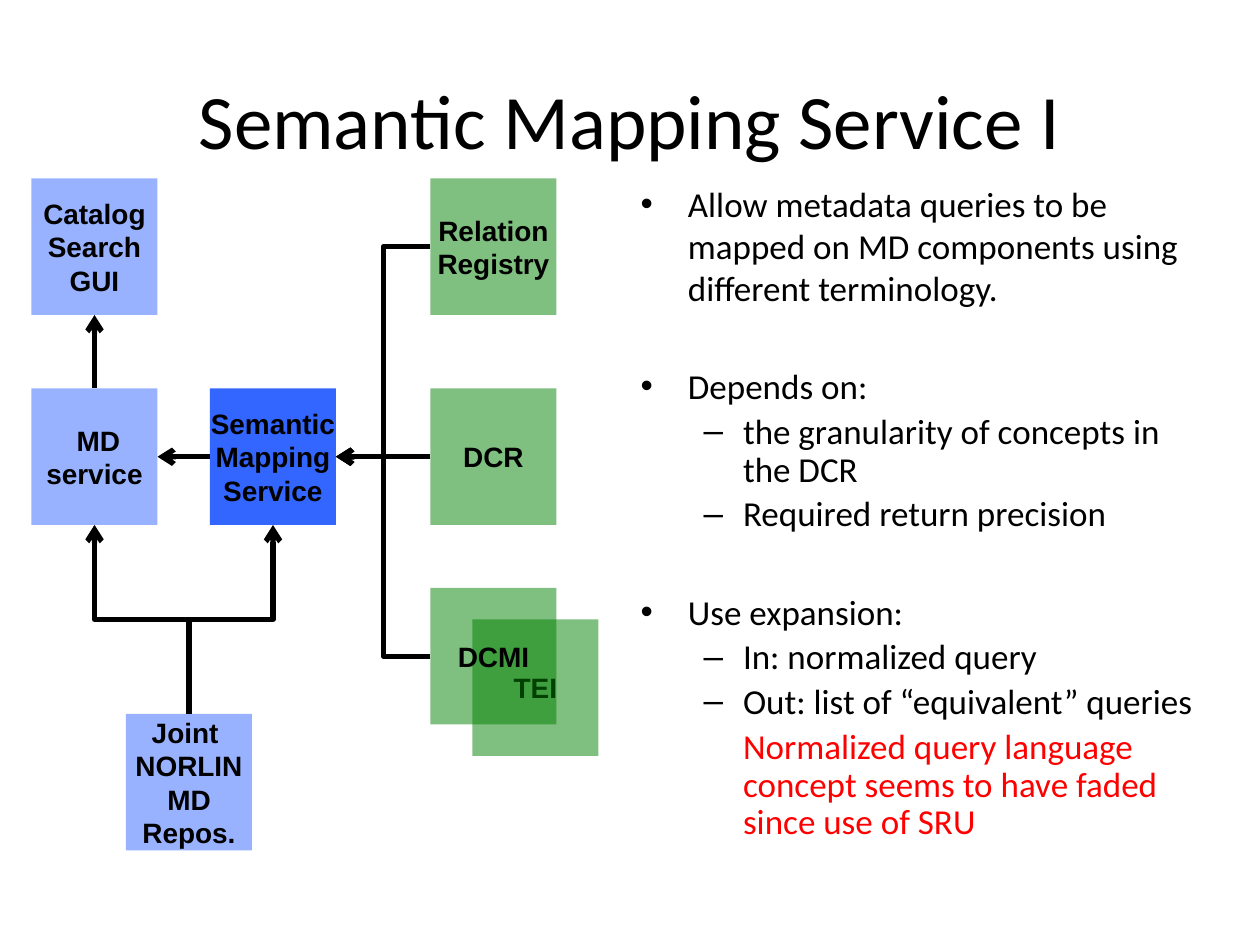
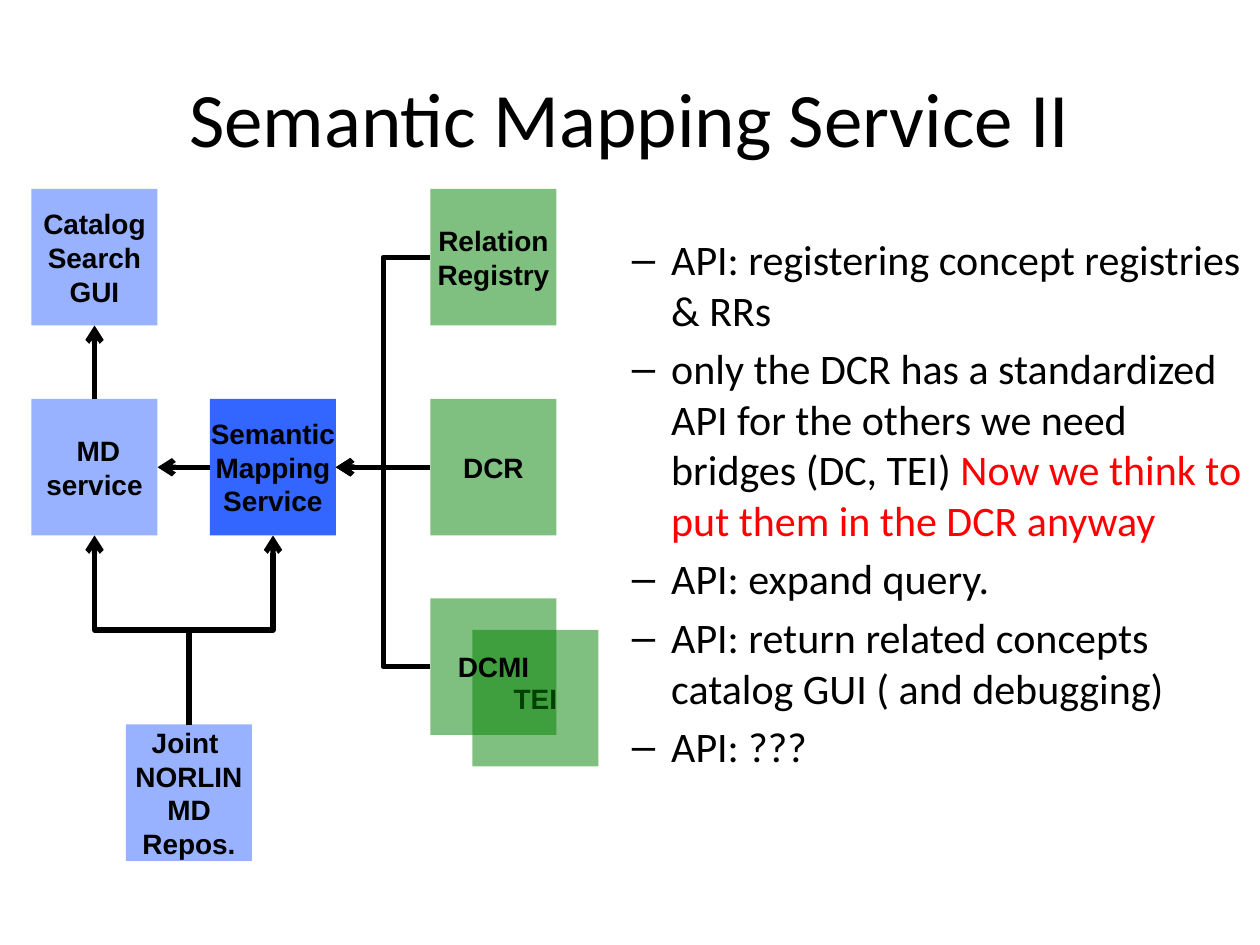
"""Build two slides that explain a semantic mapping service."""
from lxml.etree import SubElement
from pptx import Presentation
from pptx.dml.color import RGBColor
from pptx.enum.shapes import MSO_CONNECTOR, MSO_SHAPE
from pptx.enum.text import MSO_ANCHOR, PP_ALIGN
from pptx.oxml.ns import qn
from pptx.util import Pt

COLORS = {"text": "000000", "remark": "FF0000", "service": "3366FF", "registry": "008000"}
BODY_FONT, BOX_FONT = "Calibri", "Arial"
BOX_WIDTH, BOX_HEIGHT = 72, 78
LEFT, MIDDLE, RIGHT = 0, 102, 228
ROW_STEP = 120

COMPONENTS = {
    "md": (LEFT, ROW_STEP, "service", 50, " MD\nservice"),
    "mapping": (MIDDLE, ROW_STEP, "service", 100, "Semantic\nMapping\nService"),
    "relation": (RIGHT, 0, "registry", 50, "Relation\nRegistry"),
    "catalog": (LEFT, 0, "service", 50, "Catalog\nSearch\nGUI"),
    "repository": (54, 306, "service", 50, "Joint \nNORLIN\vMD Repos."),
    "dcr": (RIGHT, ROW_STEP, "registry", 50, "DCR"),
    "tei": (RIGHT + 24, 252, "registry", 50, "TEI"),
    "dcmi": (RIGHT, 234, "registry", 50, "DCMI"),
}
SIDEWAYS_FLOWS = [("relation", "mapping"), ("dcr", "mapping"), ("dcmi", "mapping"), ("mapping", "md")]
UPWARD_FLOWS = [("repository", "md"), ("repository", "mapping"), ("md", "catalog")]

BULLETS = {"point": ("•", 27, -27, 1.0), "detail": ("–", 58.5, -22.5, 0.9),
           "remark": (None, 58.5, 0, 0.9), "item": ("–", 58.5, -22.5, 1.0)}

SLIDES = [
    {
        "title": "Semantic Mapping Service I", "title_top": 23, "diagram_top": 102,
        "body_box": (359, 101, 336, 426), "size": 20, "inset_top": 3.6,
        "lines": [
            ("point", 0, [("Allow metadata queries to be mapped on MD components "
                           "using different terminology.", "text")]),
            ("point", 32, [("Depends on:", "text")]),
            ("detail", 4, [("the granularity of concepts in the DCR", "text")]),
            ("detail", 4, [("Required return precision", "text")]),
            ("point", 32, [("Use expansion:", "text")]),
            ("detail", 4, [("In: normalized query", "text")]),
            ("detail", 4, [("Out: list of “equivalent” queries", "text")]),
            ("remark", 4, [("Normalized query language concept seems to have faded "
                            "since use of SRU", "remark")]),
        ],
    },
    {
        "title": "Semantic Mapping Service II", "title_top": 21.6, "diagram_top": 108,
        "body_box": (318, 96, 402, 426), "size": 24, "inset_top": 37.6,
        "lines": [
            ("item", 0, [("API: registering concept registries & RRs", "text")]),
            ("item", 4.8, [("only the DCR has a standardized API for the others we need "
                            "bridges (DC, TEI) ", "text"),
                           ("Now we think to put them in the DCR anyway", "remark")]),
            ("item", 4.8, [("API: expand query.", "text")]),
            ("item", 4.8, [("API: return related concepts catalog GUI ( and debugging)", "text")]),
            ("item", 4.8, [("API: ???", "text")]),
        ],
    },
]


def color(name):
    """Return the named colour."""
    return RGBColor.from_string(COLORS[name])


def style_span(span, font, size, color_name="text", bold=False):
    """Set the font of one run."""
    span.font.name, span.font.size, span.font.bold = font, Pt(size), bold
    span.font.color.rgb = color(color_name)


def add_title(page, box, title):
    """Write the centred slide title."""
    frame = page.shapes.add_textbox(*map(Pt, box)).text_frame
    frame.word_wrap = True
    frame.vertical_anchor = MSO_ANCHOR.MIDDLE
    frame.text = title
    frame.paragraphs[0].alignment = PP_ALIGN.CENTER
    style_span(frame.paragraphs[0].runs[0], BODY_FONT, 44)


def set_bullet(para, kind):
    """Give a paragraph its bullet, indent and line spacing."""
    mark, margin, indent, para.line_spacing = BULLETS[kind]
    properties = para._p.get_or_add_pPr()
    properties.set("marL", str(Pt(margin)))
    properties.set("indent", str(Pt(indent)))
    if mark:
        SubElement(properties, qn("a:buFont")).set("typeface", BOX_FONT)
        SubElement(properties, qn("a:buChar")).set("char", mark)
    else:
        SubElement(properties, qn("a:buNone"))


def add_body(page, box, lines, size, inset_top):
    """Write the bulleted text."""
    frame = page.shapes.add_textbox(*map(Pt, box)).text_frame
    frame.word_wrap = True
    frame.margin_top = Pt(inset_top)
    for index, (kind, gap, spans) in enumerate(lines):
        para = frame.add_paragraph() if index else frame.paragraphs[0]
        para.space_before = Pt(gap)
        set_bullet(para, kind)
        for text, color_name in spans:
            span = para.add_run()
            span.text = text
            style_span(span, BODY_FONT, size, color_name)


def add_component(page, left, top, color_name, opacity, label):
    """Draw one labelled box of the diagram."""
    shape = page.shapes.add_shape(MSO_SHAPE.RECTANGLE, Pt(left), Pt(top), Pt(BOX_WIDTH), Pt(BOX_HEIGHT))
    shape.shadow.inherit = False
    shape.line.fill.background()
    shape.fill.solid()
    shape.fill.fore_color.rgb = color(color_name)
    if opacity < 100:
        tint = shape.fill._xPr.find(".//" + qn("a:srgbClr"))
        SubElement(tint, qn("a:alpha")).set("val", str(opacity * 1000))
    frame = shape.text_frame
    frame.word_wrap = True
    frame.vertical_anchor = MSO_ANCHOR.MIDDLE
    frame.margin_left = frame.margin_right = 0
    frame.text = label
    for para in frame.paragraphs:
        para.alignment = PP_ALIGN.CENTER
        for span in para.runs:
            style_span(span, BOX_FONT, 16, bold=True)


def add_arrow(page, start, end, upward=False):
    """Draw an arrow, with a bend halfway when its ends are not aligned."""
    (x1, y1), (x2, y2) = start, end
    bent = x1 != x2 and y1 != y2
    turned = bent and upward
    if turned:
        center_x, center_y = (x1 + x2) / 2, (y1 + y2) / 2
        half_rise, half_shift = (y1 - y2) / 2, (x2 - x1) / 2
        x1, x2 = center_x - half_rise, center_x + half_rise
        y1, y2 = center_y - half_shift, center_y + half_shift
    kind = MSO_CONNECTOR.ELBOW if bent else MSO_CONNECTOR.STRAIGHT
    arrow = page.shapes.add_connector(kind, Pt(x1), Pt(y1), Pt(x2), Pt(y2))
    arrow.line.width = Pt(3)
    arrow.line.color.rgb = color("text")
    SubElement(arrow.line._get_or_add_ln(), qn("a:tailEnd")).set("type", "arrow")
    properties = arrow._element.spPr
    SubElement(properties, qn("a:effectLst"))
    if turned:
        properties.find(qn("a:xfrm")).set("rot", str(270 * 60000))


def add_diagram(page, left, top):
    """Draw the components and the flows between them."""
    corners = {}
    for name, (x, y, *look) in COMPONENTS.items():
        corners[name] = left + x, top + y
        add_component(page, *corners[name], *look)
    for source, target in SIDEWAYS_FLOWS:
        (x1, y1), (x2, y2) = corners[source], corners[target]
        add_arrow(page, (x1, y1 + BOX_HEIGHT / 2), (x2 + BOX_WIDTH, y2 + BOX_HEIGHT / 2))
    for source, target in UPWARD_FLOWS:
        (x1, y1), (x2, y2) = corners[source], corners[target]
        add_arrow(page, (x1 + BOX_WIDTH / 2, y1), (x2 + BOX_WIDTH / 2, y2 + BOX_HEIGHT), upward=True)


def main():
    """Build and save the deck."""
    deck = Presentation()
    deck.slide_width, deck.slide_height = Pt(720), Pt(540)
    for content in SLIDES:
        page = deck.slides.add_slide(deck.slide_layouts[6])
        add_title(page, (36, content["title_top"], 648, 90), content["title"])
        add_body(page, content["body_box"], content["lines"], content["size"], content["inset_top"])
        add_diagram(page, 18, content["diagram_top"])
    deck.save("out.pptx")


if __name__ == "__main__":
    main()
